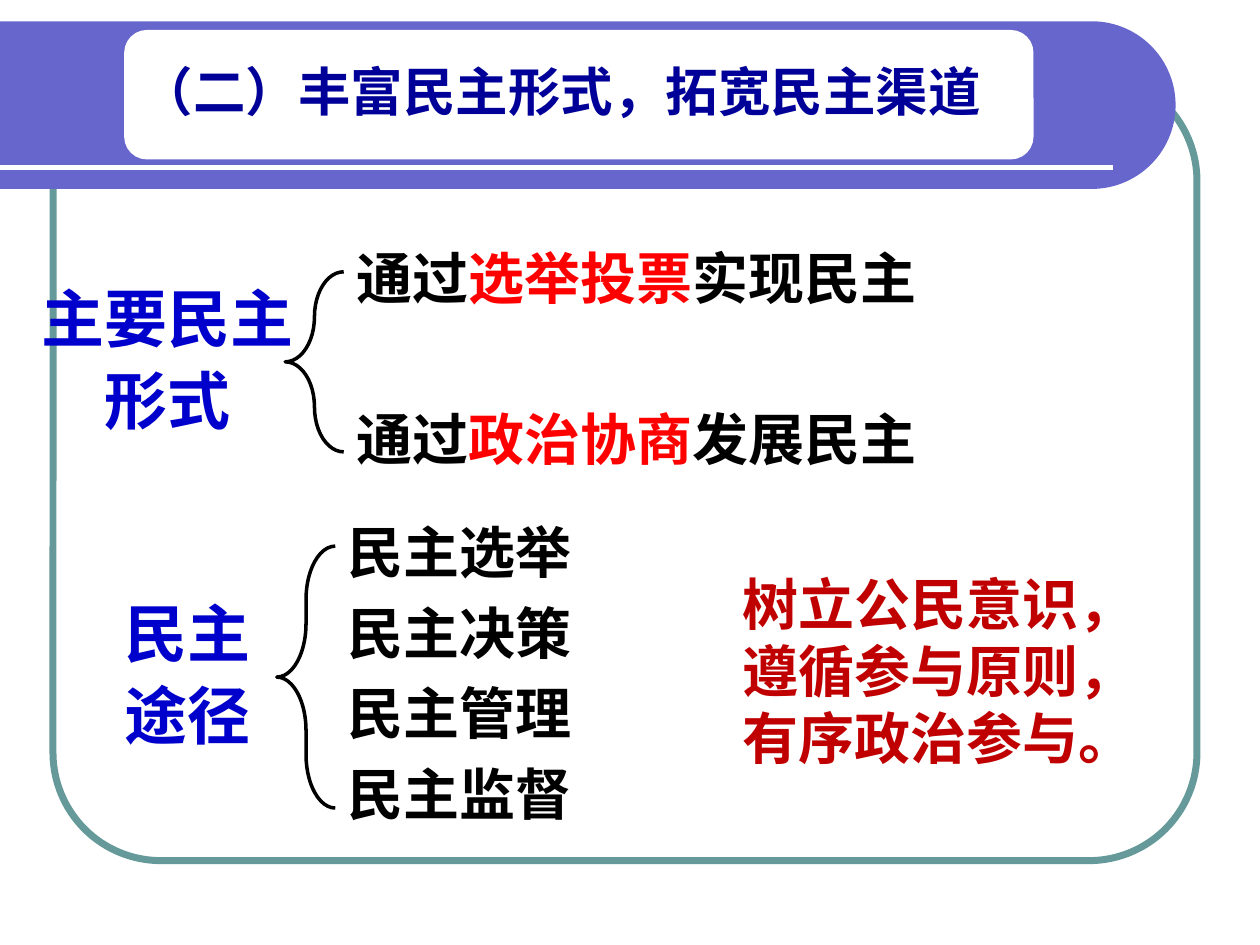
import math

from lxml import etree
from pptx import Presentation
from pptx import util as u
from pptx.dml.color import RGBColor
from pptx.enum import shapes, text
from pptx.oxml.ns import qn

COLORS = {
    "frame": "669999", "band": "6666CC", "card": "FFFFFF", "title": "000099",
    "label": "0000CC", "body": "000000", "key": "FF0000", "motto": "C00000",
}
SANS, SANS_SC, SANS_JP = "Arial", "Noto Sans CJK SC", "Noto Sans CJK JP"


def cm(*lengths):
    """Convert centimetre values to lengths."""
    return [u.Cm(length) for length in lengths]


def rgb(name):
    """Look up a colour by its role."""
    return RGBColor.from_string(COLORS[name])


def paint(shape, fill=None, line=None, width=0):
    """Give a shape its fill and outline, without a shadow."""
    shape.shadow.inherit = False
    if fill:
        shape.fill.solid()
        shape.fill.fore_color.rgb = rgb(fill)
    else:
        shape.fill.background()
    if line:
        shape.line.color.rgb = rgb(line)
        shape.line.width = u.Pt(width)
    else:
        shape.line.fill.background()


def style(run, size, color, face=SANS):
    """Format a bold run, for Latin and East Asian text alike."""
    run.font.size, run.font.bold, run.font.name = u.Pt(size), True, face
    run.font.color.rgb = rgb(color)
    etree.SubElement(run.font._element, qn("a:ea")).set("typeface", face)


def write(slide, box, lines, size, color, face=SANS, before=0, align=text.PP_ALIGN.LEFT):
    """Write one paragraph per line; parts between bars are key words."""
    frame = slide.shapes.add_textbox(*cm(*box)).text_frame
    frame.word_wrap = True
    for index, line in enumerate(lines):
        paragraph = frame.paragraphs[0] if index == 0 else frame.add_paragraph()
        paragraph.alignment = align
        paragraph.space_before = u.Pt(before)
        for part, words in enumerate(line.split("|")):
            run = paragraph.add_run()
            run.text = words
            style(run, size, "key" if part % 2 else color, face)
    return frame


def add_frame(slide, box):
    """Draw the rounded frame behind the content."""
    frame = slide.shapes.add_shape(shapes.MSO_SHAPE.ROUNDED_RECTANGLE, *cm(*box))
    frame.adjustments[0] = 0.137
    paint(frame, line="frame", width=4)


def add_banner(slide, box, heading):
    """Draw the round-ended band with its rule, card and title."""
    left, top, width, height = box
    radius = height / 2
    center = left + width - radius
    angles = [math.radians(degree) for degree in range(-90, 91, 3)]
    arc = [cm(center + radius * math.cos(a), top + radius * (1 + math.sin(a))) for a in angles]
    outline = slide.shapes.build_freeform(*cm(left, top))
    outline.add_line_segments(arc + [cm(left, top + height)], close=True)
    paint(outline.convert_to_shape(), fill="band")

    rule_y = top + 2.95
    rule = slide.shapes.add_connector(
        shapes.MSO_CONNECTOR.STRAIGHT, *cm(left, rule_y, left + 22.43, rule_y))
    rule.line.color.rgb = rgb("card")
    rule.line.width = u.Pt(3)
    etree.SubElement(rule._element.spPr, qn("a:effectLst"))

    place = cm(left + 2.54, top + 0.21, 18.26, 2.54)
    card = slide.shapes.add_shape(shapes.MSO_SHAPE.ROUNDED_RECTANGLE, *place)
    paint(card, fill="card", line="card", width=2)

    title = slide.shapes.title
    title.left, title.top, title.width, title.height = place
    slide.shapes._spTree.append(title._element)
    frame = title.text_frame
    frame.text = heading
    frame.word_wrap = True
    frame.auto_size = text.MSO_AUTO_SIZE.NONE
    frame.vertical_anchor = text.MSO_ANCHOR.MIDDLE
    frame.margin_left = frame.margin_right = u.Cm(0.3)
    frame.margin_top = frame.margin_bottom = u.Cm(0.3)
    paragraph = frame.paragraphs[0]
    paragraph.alignment = text.PP_ALIGN.LEFT
    paragraph.line_spacing = 0.9
    style(paragraph.runs[0], 30, "title", SANS_SC)


def add_branch(slide, box, indent, label, items, gap=7.6):
    """Place a two-line label, a brace and the items it opens to."""
    left, top, width, height = box
    label_height, brace_width = 3.48, 1.18
    write(slide, (left, top + (height - label_height) / 2, 6.35, label_height),
          label, 36, "label", before=3.6, align=text.PP_ALIGN.CENTER)
    frame = write(slide, (left + indent, top, width - indent, height),
                  items, 32, "body", before=gap)
    frame.paragraphs[0].space_before = u.Pt(7.6)
    brace = slide.shapes.add_shape(
        shapes.MSO_SHAPE.LEFT_BRACE,
        *cm(left + indent - brace_width, top + 0.7, brace_width, height - 1.3))
    brace.adjustments[0] = 0.917
    paint(brace, line="body", width=2)


def add_motto(slide, box):
    """Write the closing call, wrapped by its box."""
    write(slide, box, ["树立公民意识，遵循参与原则，有序政治参与。"], 32, "motto", SANS_JP)


def main():
    """Build and save the slide."""
    deck = Presentation()
    deck.slide_width, deck.slide_height = cm(25.4, 19.05)
    slide = deck.slides.add_slide(deck.slide_layouts[5])
    add_frame(slide, (1.07, 1.47, 23.06, 15.88))
    add_banner(slide, (0, 0.43, 23.7, 3.38), "（二）丰富民主形式，拓宽民主渠道")
    add_branch(slide, (0.2, 4.78, 22.81, 4.93), 6.73, ["主要民主", "形式"],
               ["通过|选举投票|实现民主", "通过|政治协商|发展民主"], gap=53.5)
    add_branch(slide, (0.61, 10.31, 22.23, 6.58), 6.15, ["民主", "途径"],
               ["民主选举", "民主决策", "民主管理", "民主监督"])
    add_motto(slide, (14.71, 11.35, 8.99, 4.37))
    deck.save("out.pptx")


if __name__ == "__main__":
    main()
